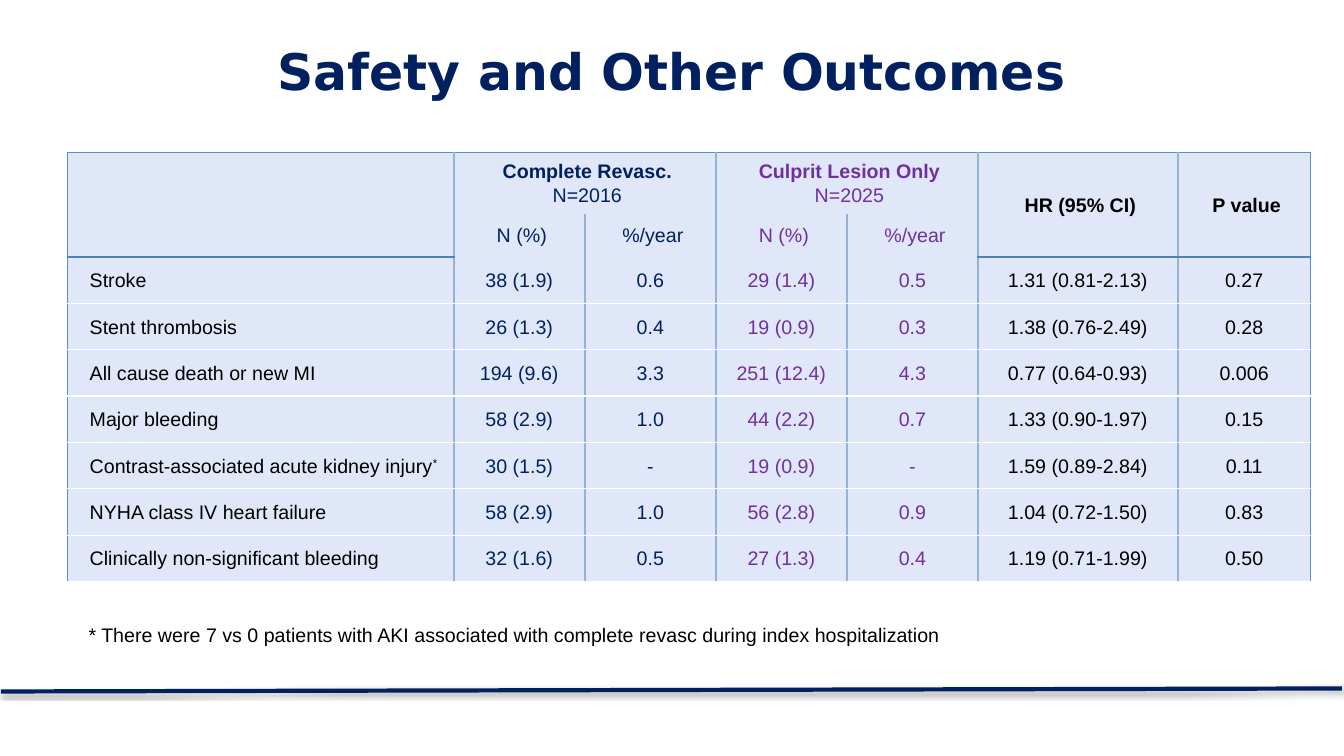
import pptx
import pptx.dml.color
import pptx.enum.shapes
import pptx.enum.text
import pptx.oxml
import pptx.oxml.ns
import pptx.util
from dataclasses import dataclass

Inches, Pt = pptx.util.Inches, pptx.util.Pt
Align, Anchor = pptx.enum.text.PP_ALIGN, pptx.enum.text.MSO_ANCHOR
SLIDE_W, SLIDE_H = 13.33, 7.5


@dataclass(frozen=True)
class Theme:
    navy: str = "002060"
    purple: str = "7030A0"
    black: str = "000000"
    panel: str = "E0E7F8"
    column_rule: str = "95B3D7"
    outer_rule: str = "558ED5"
    header_rule: str = "4F81BD"
    row_rule: str = "FFFFFF"
    title_font: str = "DejaVu Sans"
    body_font: str = "Arial"
    title_size: int = 36
    body_size: int = 14


THEME = Theme()
COLUMNS = [3.83, 1.3, 1.3, 1.3, 1.3, 1.98, 1.32]
ROWS = [0.61, 0.43] + [0.46] * 7
HEADER_ROWS = 2
ARM_COLUMNS = range(1, 5)
COLUMN_COLOURS = [THEME.black, THEME.navy, THEME.navy, THEME.purple,
                  THEME.purple, THEME.black, THEME.black]

# Header cells: row, column, rows spanned, columns spanned, bold line, plain line
HEADERS = [
    (0, 0, 2, 1, "", ""),
    (0, 1, 1, 2, "Complete Revasc.", "N=2016"),
    (0, 3, 1, 2, "Culprit Lesion Only", "N=2025"),
    (0, 5, 2, 1, "HR (95% CI)", ""),
    (0, 6, 2, 1, "P value", ""),
    (1, 1, 1, 1, "", "N (%)"),
    (1, 2, 1, 1, "", "%/year"),
    (1, 3, 1, 1, "", "N (%)"),
    (1, 4, 1, 1, "", "%/year"),
]
OUTCOMES = [
    ("Stroke", "38 (1.9)", "0.6", "29 (1.4)", "0.5", "1.31 (0.81-2.13)", "0.27"),
    ("Stent thrombosis", "26 (1.3)", "0.4", "19 (0.9)", "0.3", "1.38 (0.76-2.49)", "0.28"),
    ("All cause death or new MI", "194 (9.6)", "3.3", "251 (12.4)", "4.3",
     "0.77 (0.64-0.93)", "0.006"),
    ("Major bleeding", "58 (2.9)", "1.0", "44 (2.2)", "0.7", "1.33 (0.90-1.97)", "0.15"),
    ("Contrast-associated acute kidney injury*", "30 (1.5)", "-", "19 (0.9)", "-",
     "1.59 (0.89-2.84)", "0.11"),
    ("NYHA class IV heart failure", "58 (2.9)", "1.0", "56 (2.8)", "0.9",
     "1.04 (0.72-1.50)", "0.83"),
    ("Clinically non-significant bleeding", "32 (1.6)", "0.5", "27 (1.3)", "0.4",
     "1.19 (0.71-1.99)", "0.50"),
]


def rgb(colour):
    return pptx.dml.color.RGBColor.from_string(colour)


def write(paragraph, text, colour=THEME.black, size=THEME.body_size,
          font=THEME.body_font, bold=False, align=Align.LEFT, raised=False):
    """Append one formatted run to a paragraph."""
    paragraph.alignment = align
    run = paragraph.add_run()
    run.text = text
    run.font.name, run.font.size, run.font.bold = font, Pt(size), bold
    run.font.color.rgb = rgb(colour)
    if raised:
        run.font._element.set("baseline", "30000")


def add_text(slide, left, top, width, height, text, insets=None, **text_format):
    box = slide.shapes.add_textbox(*map(Inches, (left, top, width, height)))
    frame = box.text_frame
    frame.word_wrap = True
    if insets:
        (frame.margin_left, frame.margin_top,
         frame.margin_right, frame.margin_bottom) = map(Inches, insets)
    write(frame.paragraphs[0], text, **text_format)


def set_border(cell, side, colour, width):
    """Draw one cell edge; a colour of None leaves it open."""
    paint = f'<a:solidFill><a:srgbClr val="{colour}"/></a:solidFill>' if colour else "<a:noFill/>"
    cell._tc.get_or_add_tcPr().append(pptx.oxml.parse_xml(
        f'<a:ln{side} {pptx.oxml.ns.nsdecls("a")} w="{Pt(width)}">{paint}</a:ln{side}>'))


def horizontal_rule(edge, column):
    """Colour of the rule above row number edge."""
    if edge == 0:
        return THEME.outer_rule
    if edge < HEADER_ROWS:
        return None
    if edge == HEADER_ROWS:
        return None if column in ARM_COLUMNS else THEME.header_rule
    return THEME.row_rule


def vertical_rule(edge, row):
    """Colour and width of the rule to the left of column number edge."""
    if edge in (0, len(COLUMNS)):
        return THEME.outer_rule, 1
    inside_arm = row == 0 and edge in (2, 4)
    return (None if inside_arm else THEME.column_rule), 1.5


def style_cell(cell, row, column):
    set_border(cell, "L", *vertical_rule(column, row))
    set_border(cell, "R", *vertical_rule(column + 1, row))
    set_border(cell, "T", horizontal_rule(row, column), 1)
    set_border(cell, "B", horizontal_rule(row + 1, column), 1)
    cell.fill.solid()
    cell.fill.fore_color.rgb = rgb(THEME.panel)
    cell.vertical_anchor = Anchor.MIDDLE
    header = row < HEADER_ROWS
    cell.margin_left = Inches(0.05 if header else 0.04)
    cell.margin_right = Inches(0 if header else 0.04)
    cell.margin_top = cell.margin_bottom = 0
    paragraph = cell.text_frame.paragraphs[0]
    paragraph.line_spacing = 1.07
    paragraph.font.size = Pt(THEME.body_size)


def fill_header(table):
    for row, column, tall, wide, strong, plain in HEADERS:
        cell = table.cell(row, column)
        if tall * wide > 1:
            cell.merge(table.cell(row + tall - 1, column + wide - 1))
        paragraph = cell.text_frame.paragraphs[0]
        look = dict(colour=COLUMN_COLOURS[column], align=Align.CENTER)
        if strong:
            write(paragraph, strong, bold=True, **look)
        if strong and plain:
            paragraph.add_line_break()
        if plain:
            write(paragraph, plain, **look)


def fill_outcomes(table):
    for row, outcome in enumerate(OUTCOMES, HEADER_ROWS):
        for column, value in enumerate(outcome):
            paragraph = table.cell(row, column).text_frame.paragraphs[0]
            label, star, _ = value.partition("*")
            write(paragraph, label, colour=COLUMN_COLOURS[column],
                  align=Align.CENTER if column else Align.LEFT)
            if star:
                write(paragraph, star, raised=True)
            if column == 0:
                properties = paragraph._p.get_or_add_pPr()
                properties.set("marL", "0")
                properties.set("indent", str(Inches(0.18)))


def add_outcome_table(slide, left, top):
    table = slide.shapes.add_table(len(ROWS), len(COLUMNS), *map(
        Inches, (left, top, sum(COLUMNS), sum(ROWS)))).table
    table.first_row = table.horz_banding = False
    for column, width in zip(table.columns, COLUMNS):
        column.width = Inches(width)
    for row, height in zip(table.rows, ROWS):
        row.height = Inches(height)
    for row in range(len(ROWS)):
        for column in range(len(COLUMNS)):
            style_cell(table.cell(row, column), row, column)
    fill_header(table)
    fill_outcomes(table)


def add_footer_rule(slide, start, end):
    rule = slide.shapes.add_connector(
        pptx.enum.shapes.MSO_CONNECTOR.STRAIGHT, *map(Inches, start + end))
    rule.line.color.rgb = rgb(THEME.navy)
    rule.line.width = Pt(3)
    rule._element.spPr.append(pptx.oxml.parse_xml(
        f'<a:effectLst {pptx.oxml.ns.nsdecls("a")}>'
        f'<a:outerShdw blurRad="{Pt(3.1)}" dist="{Pt(1.8)}" dir="5400000" rotWithShape="0">'
        f'<a:srgbClr val="{THEME.black}"><a:alpha val="35000"/></a:srgbClr>'
        '</a:outerShdw></a:effectLst>'))


def main():
    deck = pptx.Presentation()
    deck.slide_width, deck.slide_height = Inches(SLIDE_W), Inches(SLIDE_H)
    slide = deck.slides.add_slide(deck.slide_layouts[6])

    # Footer rule, outcome table, footnote, title
    add_footer_rule(slide, (0.01, 6.86), (SLIDE_W - 0.02, 6.83))
    add_outcome_table(slide, 0.67, 1.51)
    add_text(slide, 0.78, 6.13, 11.97, 0.34,
             "* There were 7 vs 0 patients with AKI associated with complete revasc "
             "during index hospitalization")
    add_text(slide, 1.31, 0.33, 10.7, 0.5, "Safety and Other Outcomes",
             insets=(0, 0.07, 0, 0), colour=THEME.navy, size=THEME.title_size,
             font=THEME.title_font, bold=True, align=Align.CENTER)
    deck.save("out.pptx")


if __name__ == "__main__":
    main()
